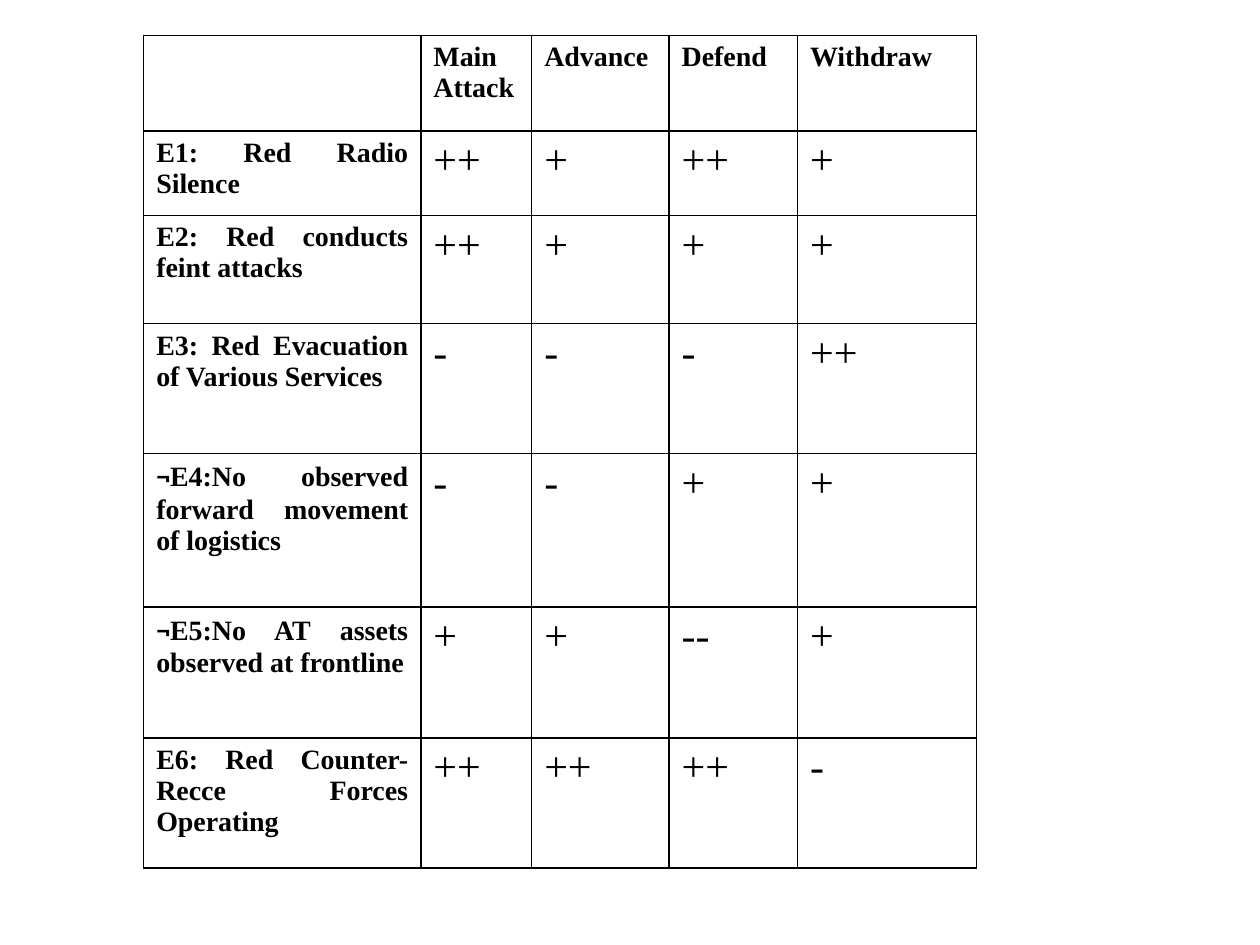
from lxml.etree import SubElement
from pptx import Presentation
from pptx.dml.color import RGBColor
from pptx.enum.text import PP_ALIGN
from pptx.oxml.ns import qn
from pptx.util import Inches, Pt

SERIF = "Times New Roman"
INK = "000000"
NEGATION = "¬"

COLUMN_WIDTHS = [2.2, 0.88, 1.09, 1.02, 1.42]
ROW_HEIGHTS = [0.76, 0.67, 0.86, 1.03, 1.22, 1.04, 1.03]

HEADINGS = ["", "Main Attack", "Advance", "Defend", "Withdraw"]
EVIDENCE = [
    ("E1: Red Radio Silence", "++", "+", "++", "+"),
    ("E2: Red conducts feint attacks", "++", "+", "+", "+"),
    ("E3: Red Evacuation of Various Services", "-", "-", "-", "++"),
    ("¬E4:No observed forward movement of logistics", "-", "-", "+", "+"),
    ("¬E5:No AT assets observed at frontline", "+", "+", "--", "+"),
    ("E6: Red Counter-Recce Forces Operating", "++", "++", "++", "-"),
]


def color(hex_value):
    return RGBColor.from_string(hex_value)


def add_borders(cell, width=1):
    properties = cell._tc.get_or_add_tcPr()
    for side in ("lnL", "lnR", "lnT", "lnB"):
        line = SubElement(properties, qn(f"a:{side}"), w=str(Pt(width)))
        fill = SubElement(line, qn("a:solidFill"))
        SubElement(fill, qn("a:srgbClr"), val=INK)


def write_cell(cell, text, size, bold, align=PP_ALIGN.LEFT):
    para = cell.text_frame.paragraphs[0]
    para.alignment = align
    para.font.name = SERIF
    para.font.size = Pt(size)
    para.font.bold = bold
    para.font.color.rgb = color(INK)
    # The negation sign is set in its own typeface
    if text.startswith(NEGATION):
        sign = para.add_run()
        sign.text = NEGATION
        sign.font.name = "Calibri"
        text = text.removeprefix(NEGATION)
    if text:
        para.add_run().text = text


def add_grid(slide, left, top):
    frame = slide.shapes.add_table(
        len(ROW_HEIGHTS), len(COLUMN_WIDTHS), Inches(left), Inches(top),
        Inches(sum(COLUMN_WIDTHS)), Inches(sum(ROW_HEIGHTS)))
    table = frame.table
    table.first_row = table.horz_banding = False
    for column, width in zip(table.columns, COLUMN_WIDTHS):
        column.width = Inches(width)
    for row, height in zip(table.rows, ROW_HEIGHTS):
        row.height = Inches(height)
    for cell in table.iter_cells():
        add_borders(cell)
        cell.fill.background()
    return table


def main():
    deck = Presentation()
    deck.slide_width, deck.slide_height = Inches(10), Inches(7.5)
    slide = deck.slides.add_slide(deck.slide_layouts[6])
    table = add_grid(slide, 1.14, 0.28)

    # Courses of action across the top
    for column, heading in enumerate(HEADINGS):
        write_cell(table.cell(0, column), heading, 16, True)

    # Evidence with its rating for each course of action
    for row, (evidence, *ratings) in enumerate(EVIDENCE, start=1):
        write_cell(table.cell(row, 0), evidence, 16, True, PP_ALIGN.JUSTIFY)
        for column, rating in enumerate(ratings, start=1):
            write_cell(table.cell(row, column), rating, 24, False)

    deck.save("out.pptx")


if __name__ == "__main__":
    main()
